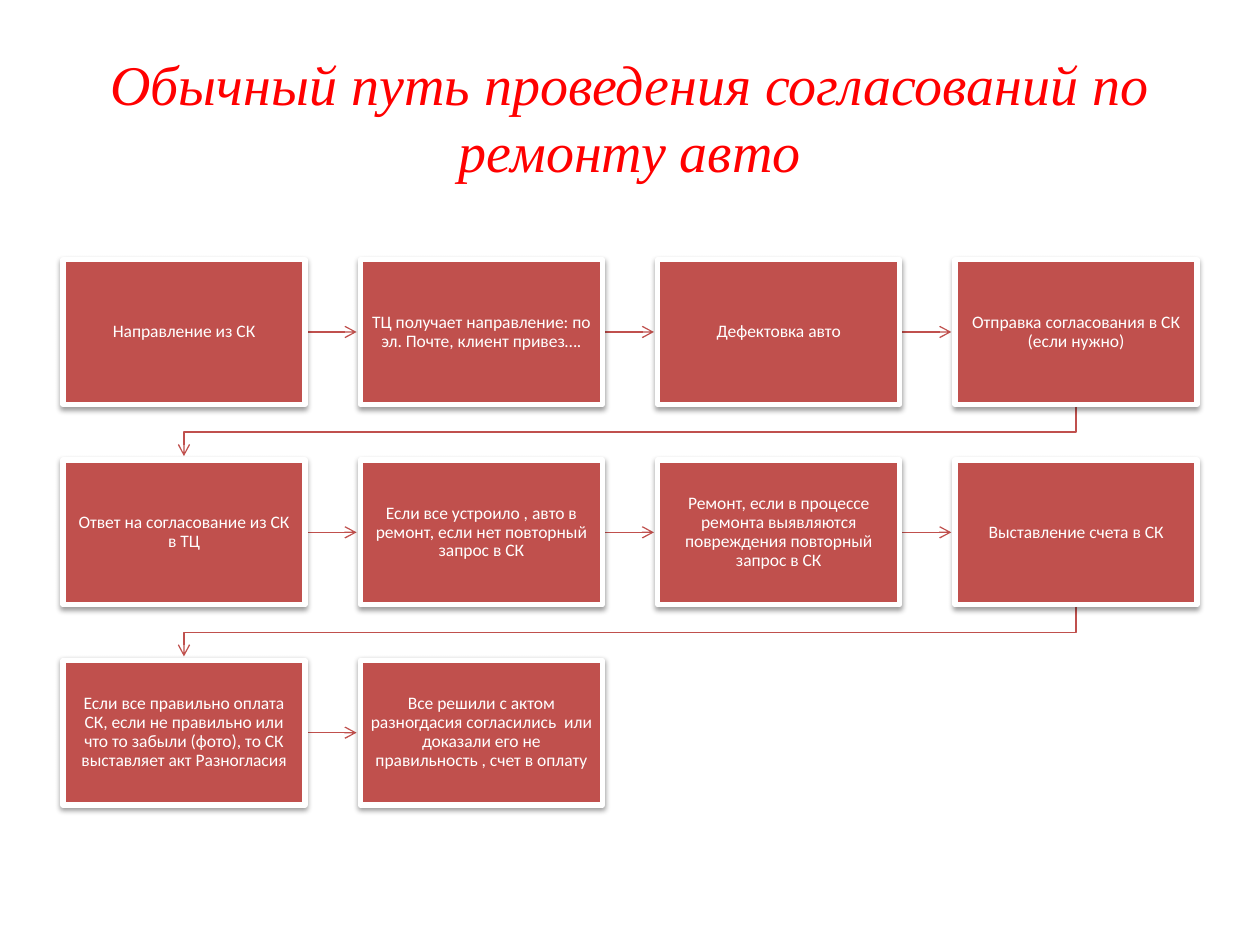
import pptx
import pptx.dml.color
import pptx.enum.shapes
import pptx.enum.text
import pptx.oxml
import pptx.oxml.ns
import pptx.util

Inches, Pt = pptx.util.Inches, pptx.util.Pt
qn = pptx.oxml.ns.qn
RED, WHITE = "C0504D", "FFFFFF"
NS = 'xmlns:a="http://schemas.openxmlformats.org/drawingml/2006/main"'
SHADOW = (f'<a:effectLst {NS}><a:outerShdw blurRad="{Pt(3.1)}" dist="{Pt(1.6)}" '
          'dir="5400000" rotWithShape="0"><a:srgbClr val="000000">'
          '<a:alpha val="38000"/></a:srgbClr></a:outerShdw></a:effectLst>')


def rgb(value):
    return pptx.dml.color.RGBColor.from_string(value)


def write(sp, text, size, font, color, italic=False, inset=0.1, spacing=1.0):
    tf = sp.text_frame
    tf.word_wrap = True
    tf.vertical_anchor = pptx.enum.text.MSO_ANCHOR.MIDDLE
    tf.margin_left = tf.margin_right = Inches(inset)
    tf.margin_top = tf.margin_bottom = Inches(min(inset, 0.08))
    p = tf.paragraphs[0]
    p.alignment = pptx.enum.text.PP_ALIGN.CENTER
    p.line_spacing = spacing
    r = p.add_run()
    r.text = text
    r.font.size, r.font.name, r.font.italic = Pt(size), font, italic
    r.font.color.rgb = rgb(color)


prs = pptx.Presentation()
prs.slide_width, prs.slide_height = Inches(10), Inches(7.5)
s = prs.slides.add_slide(prs.slide_layouts[6])

# Title
sp = s.shapes.add_textbox(Inches(0.5), Inches(0.3), Inches(9), Inches(1.25))
write(sp, "Обычный путь проведения согласований по ремонту авто",
      size=32, font="Times New Roman", color="FF0000", italic=True)

# Process steps, read row by row on a grid of four columns
steps = [
    "Направление из СК",
    "ТЦ получает направление: по эл. Почте, клиент привез….",
    "Дефектовка авто",
    "Отправка согласования в СК (если нужно)",
    "Ответ на согласование из СК в ТЦ",
    "Если все устроило , авто в ремонт, если нет повторный запрос в СК",
    "Ремонт, если в процессе ремонта выявляются повреждения повторный запрос в СК",
    "Выставление счета в СК",
    "Если все правильно оплата СК, если не правильно или что то забыли (фото), "
    "то СК выставляет акт Разногласия",
    "Все решили с актом разногдасия согласились  или доказали его не "
    "правильность , счет в оплату",
]
COLS = 4
LEFT, TOP = Inches(0.5), Inches(2.06)
BOX_W, BOX_H = Inches(1.92), Inches(1.15)
STEP_X, STEP_Y = Inches(2.36), Inches(1.59)
ARROW = Inches(0.41)

for i, text in enumerate(steps):
    row, col = divmod(i, COLS)
    x, y = LEFT + col * STEP_X, TOP + row * STEP_Y
    right, bottom = x + BOX_W, y + BOX_H

    # Arrow to the next step: straight within a row, bent between rows
    if i < len(steps) - 1:
        if col < COLS - 1:
            mid = y + BOX_H // 2
            line = s.shapes.add_connector(
                pptx.enum.shapes.MSO_CONNECTOR.STRAIGHT,
                right, mid, right + ARROW, mid)
        else:
            start, end = x + BOX_W // 2, LEFT + BOX_W // 2
            turn = bottom + (STEP_Y - BOX_H) // 2
            fb = s.shapes.build_freeform(start, bottom)
            fb.add_line_segments(
                [(start, turn), (end, turn), (end, bottom + ARROW)], close=False)
            line = fb.convert_to_shape()
            line.fill.background()
        line.line.color.rgb = rgb(RED)
        line.line.width = Pt(0.75)
        pr = line._element.spPr
        pr.find(qn("a:ln")).append(
            pptx.oxml.parse_xml(f'<a:tailEnd {NS} type="arrow"/>'))
        pr.append(pptx.oxml.parse_xml(f"<a:effectLst {NS}/>"))

    # Step box
    sp = s.shapes.add_shape(pptx.enum.shapes.MSO_SHAPE.RECTANGLE,
                            x, y, BOX_W, BOX_H)
    sp.fill.solid()
    sp.fill.fore_color.rgb = rgb(RED)
    sp.line.color.rgb = rgb(WHITE)
    sp.line.width = Pt(3)
    sp._element.spPr.append(pptx.oxml.parse_xml(SHADOW))
    write(sp, text, size=10, font="Calibri", color=WHITE, inset=0.08, spacing=0.9)

prs.save("out.pptx")
